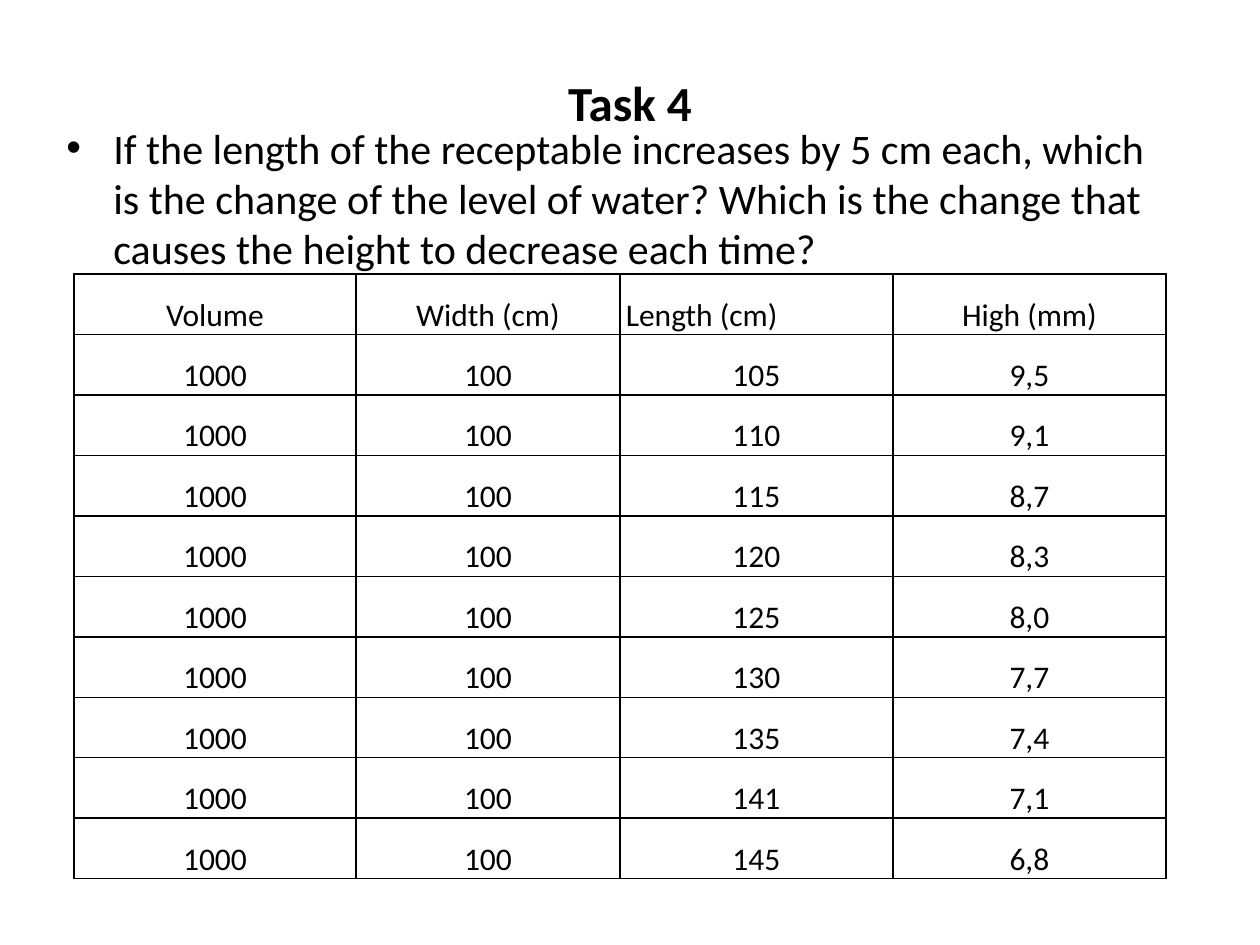
from dataclasses import dataclass

from lxml.etree import SubElement
from pptx import Presentation
from pptx.dml.color import RGBColor
from pptx.enum.text import MSO_ANCHOR, PP_ALIGN
from pptx.oxml.ns import qn
from pptx.util import Emu, Pt


@dataclass(frozen=True)
class Theme:
    font: str = "Calibri"
    ink: str = "000000"
    title_size: int = 28
    question_size: int = 24
    table_size: int = 18
    border_width: int = 1


THEME = Theme()
EMU_PER_PX = 914400 / 126

SLIDE_SIZE = (1260, 945)
TITLE_BOX = (63, 38, 1134, 127)
QUESTION_BOX = (54, 116, 1134, 213)
TABLE_BOX = (74, 274, 1092, 605)
COLUMN_WIDTHS = (282, 264, 273, 273)

QUESTION = (
    "If the length of the receptable increases by 5 cm each, which "
    "is the change of the level of water? Which is the change that "
    "causes the height to decrease each time?"
)
HEADINGS = ("Volume", "Width (cm)", "Length (cm)", "High (mm)")
HEIGHT_BY_LENGTH = {
    105: "9,5", 110: "9,1", 115: "8,7", 120: "8,3", 125: "8,0",
    130: "7,7", 135: "7,4", 141: "7,1", 145: "6,8",
}


def px(length):
    return Emu(round(length * EMU_PER_PX))


def write_text(frame, text, *, size, bold=False, align=PP_ALIGN.LEFT,
               line_spacing=None, space_before=None):
    frame.word_wrap = True
    paragraph = frame.paragraphs[0]
    paragraph.alignment = align
    paragraph.line_spacing = line_spacing
    paragraph.space_before = space_before
    run = paragraph.add_run()
    run.text = text
    run.font.name = THEME.font
    run.font.size = Pt(size)
    run.font.bold = bold
    run.font.color.rgb = RGBColor.from_string(THEME.ink)
    return paragraph


def add_bullet(paragraph, indent):
    properties = paragraph._p.get_or_add_pPr()
    properties.set("marL", str(px(indent)))
    properties.set("indent", str(-px(indent)))
    SubElement(properties, qn("a:buFont"), typeface="Arial")
    SubElement(properties, qn("a:buChar"), char="•")


def add_borders(cell):
    properties = cell._tc.get_or_add_tcPr()
    for side in ("lnL", "lnR", "lnT", "lnB"):
        line = SubElement(properties, qn(f"a:{side}"),
                          w=str(Pt(THEME.border_width)))
        fill = SubElement(line, qn("a:solidFill"))
        SubElement(fill, qn("a:srgbClr"), val=THEME.ink)


def add_title(slide, box):
    frame = slide.shapes.add_textbox(*map(px, box)).text_frame
    frame.vertical_anchor = MSO_ANCHOR.MIDDLE
    write_text(frame, "Task 4", size=THEME.title_size, bold=True,
               align=PP_ALIGN.CENTER)


def add_question(slide, box):
    frame = slide.shapes.add_textbox(*map(px, box)).text_frame
    paragraph = write_text(frame, QUESTION, size=THEME.question_size,
                           space_before=Pt(THEME.question_size * 0.2))
    add_bullet(paragraph, indent=47)


def fill_cell(cell, text, align):
    cell.margin_left = cell.margin_right = px(6)
    cell.margin_top = cell.margin_bottom = 0
    cell.vertical_anchor = MSO_ANCHOR.BOTTOM
    add_borders(cell)
    cell.fill.background()
    write_text(cell.text_frame, text, size=THEME.table_size, align=align,
               line_spacing=1.15)


def add_measurements(slide, box):
    records = [HEADINGS] + [
        ("1000", "100", str(length), height)
        for length, height in HEIGHT_BY_LENGTH.items()
    ]
    table = slide.shapes.add_table(
        len(records), len(HEADINGS), *map(px, box)).table
    table.first_row = table.horz_banding = False
    for column, width in zip(table.columns, COLUMN_WIDTHS):
        column.width = px(width)
    for row, record in zip(table.rows, records):
        row.height = px(box[3] / len(records))
        for cell, text in zip(row.cells, record):
            justified = text == "Length (cm)"
            fill_cell(cell, text,
                      PP_ALIGN.JUSTIFY if justified else PP_ALIGN.CENTER)


def main():
    presentation = Presentation()
    presentation.slide_width, presentation.slide_height = map(px, SLIDE_SIZE)
    slide = presentation.slides.add_slide(presentation.slide_layouts[6])
    add_title(slide, TITLE_BOX)
    add_question(slide, QUESTION_BOX)
    add_measurements(slide, TABLE_BOX)
    presentation.save("out.pptx")


if __name__ == "__main__":
    main()
